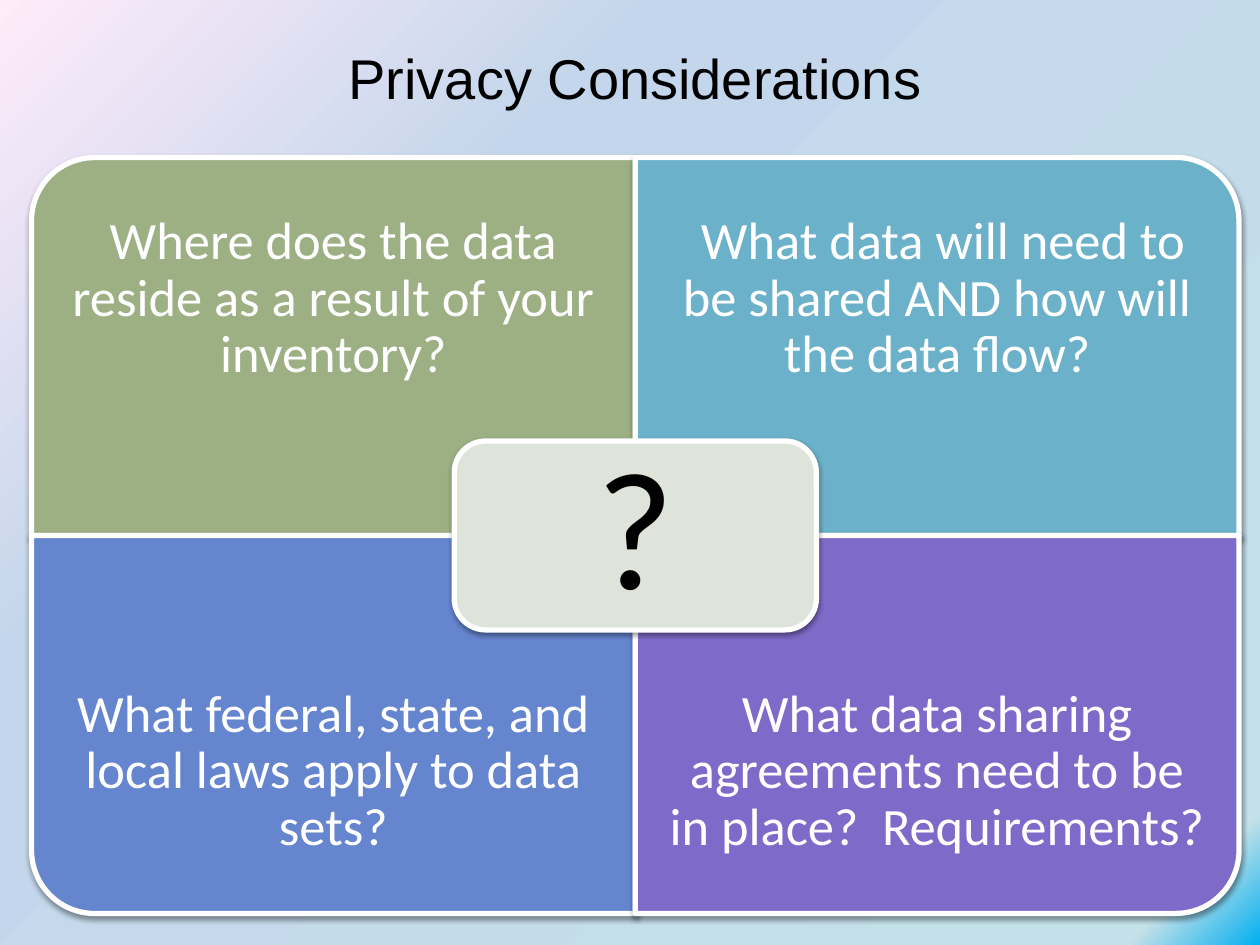
from dataclasses import dataclass

import pptx
import pptx.dml.color
import pptx.enum.shapes
import pptx.enum.text
import pptx.oxml
import pptx.oxml.ns
import pptx.util

Pt = pptx.util.Pt
SHAPE = pptx.enum.shapes.MSO_SHAPE
ANCHOR = pptx.enum.text.MSO_ANCHOR
NS = pptx.oxml.ns.nsdecls("a", "p")

# Grid of the matrix, in points
LEFT, TOP = 18, 90
CELL_W, CELL_H = 345, 216
TEXT_H = 162
HUB_W, HUB_H, HUB_PAD = 207, 108, 5.3
GRADIENT = [(0, "00B0F0"), (6, "C4E0E9"), (70, "C4D6EB"), (100, "FFEBFA")]


@dataclass
class Quadrant:
    row: int
    col: int
    rotation: int
    fill: str
    text: str


QUADRANTS = [
    Quadrant(0, 0, 270, "9CB084", "Where does the data reside as a result of your inventory?"),
    Quadrant(0, 1, 0, "6BB1C9", " What data will need to be shared AND how will the data flow?"),
    Quadrant(1, 0, 180, "6585CF", "What federal, state, and local laws apply to data sets?"),
    Quadrant(1, 1, 90, "7E6BC9", "What data sharing agreements need to be in place?  Requirements?"),
]


def rgb(value: str) -> pptx.dml.color.RGBColor:
    return pptx.dml.color.RGBColor.from_string(value)


def set_background(s) -> None:
    stops = "".join(
        f'<a:gs pos="{pos * 1000}"><a:srgbClr val="{color}"/></a:gs>' for pos, color in GRADIENT
    )
    s.element.cSld.insert(0, pptx.oxml.parse_xml(
        f'<p:bg {NS}><p:bgPr><a:gradFill rotWithShape="1"><a:gsLst>{stops}</a:gsLst>'
        '<a:path path="circle"><a:fillToRect l="100000" t="100000"/></a:path>'
        '</a:gradFill><a:effectLst/></p:bgPr></p:bg>'))


def add_panel(shapes, kind, x: float, y: float, w: float, h: float,
              fill: str, rotation: int = 0) -> None:
    """Draw a white-edged panel covering the given area once rotated."""
    if rotation % 180:
        x, y, w, h = x + (w - h) / 2, y + (h - w) / 2, h, w
    sp = shapes.add_shape(kind, Pt(x), Pt(y), Pt(w), Pt(h))
    sp.rotation = rotation
    sp.fill.solid()
    sp.fill.fore_color.rgb = rgb(fill)
    sp.line.color.rgb = rgb("FFFFFF")
    sp.line.width = Pt(3)
    sp.element.spPr.append(pptx.oxml.parse_xml(
        f'<a:effectLst {NS}><a:outerShdw blurRad="{Pt(3.1)}" dist="{Pt(1.6)}" dir="5400000" '
        'rotWithShape="0"><a:srgbClr val="000000"><a:alpha val="38000"/></a:srgbClr>'
        '</a:outerShdw></a:effectLst>'))


def add_text(shapes, x: float, y: float, w: float, h: float, text: str, size: float,
             color: str, inset: float, font: str = "Calibri"):
    tf = shapes.add_textbox(Pt(x), Pt(y), Pt(w), Pt(h)).text_frame
    tf.word_wrap = True
    tf.vertical_anchor = ANCHOR.MIDDLE
    tf.margin_left = tf.margin_right = tf.margin_top = tf.margin_bottom = Pt(inset)
    p = tf.paragraphs[0]
    p.text = text
    p.alignment = pptx.enum.text.PP_ALIGN.CENTER
    p.font.size = Pt(size)
    p.font.name = font
    p.font.color.rgb = rgb(color)
    return tf


def add_matrix_text(shapes, x: float, y: float, w: float, h: float, text: str,
                    size: float, color: str, inset: float) -> None:
    p = add_text(shapes, x, y, w, h, text, size, color, inset).paragraphs[0]
    p.line_spacing = 0.9
    p.space_after = Pt(0.35 * size)


def main() -> None:
    prs = pptx.Presentation()
    prs.slide_width, prs.slide_height = Pt(720), Pt(540)
    s = prs.slides.add_slide(prs.slide_layouts[6])
    set_background(s)

    # Title
    tf = add_text(s.shapes, LEFT, 18, 2 * CELL_W, 60, "Privacy Considerations",
                  32, "000000", 7, "Arial")
    tf.vertical_anchor = ANCHOR.TOP

    # Four quadrants, with text kept clear of the hub
    matrix = s.shapes.add_group_shape().shapes
    for q in QUADRANTS:
        x, y = LEFT + q.col * CELL_W, TOP + q.row * CELL_H
        add_panel(matrix, SHAPE.ROUND_1_RECTANGLE, x, y, CELL_W, CELL_H, q.fill, q.rotation)
        add_matrix_text(matrix, x, y + q.row * (CELL_H - TEXT_H), CELL_W, TEXT_H,
                        q.text, 30, "FFFFFF", 16.8)

    # Central hub
    x, y = LEFT + CELL_W - HUB_W / 2, TOP + CELL_H - HUB_H / 2
    add_panel(matrix, SHAPE.ROUNDED_RECTANGLE, x, y, HUB_W, HUB_H, "DEE4D9")
    add_matrix_text(matrix, x + HUB_PAD, y + HUB_PAD, HUB_W - 2 * HUB_PAD,
                    HUB_H - 2 * HUB_PAD, "?", 96, "000000", 28.8)

    prs.save("out.pptx")


if __name__ == "__main__":
    main()
